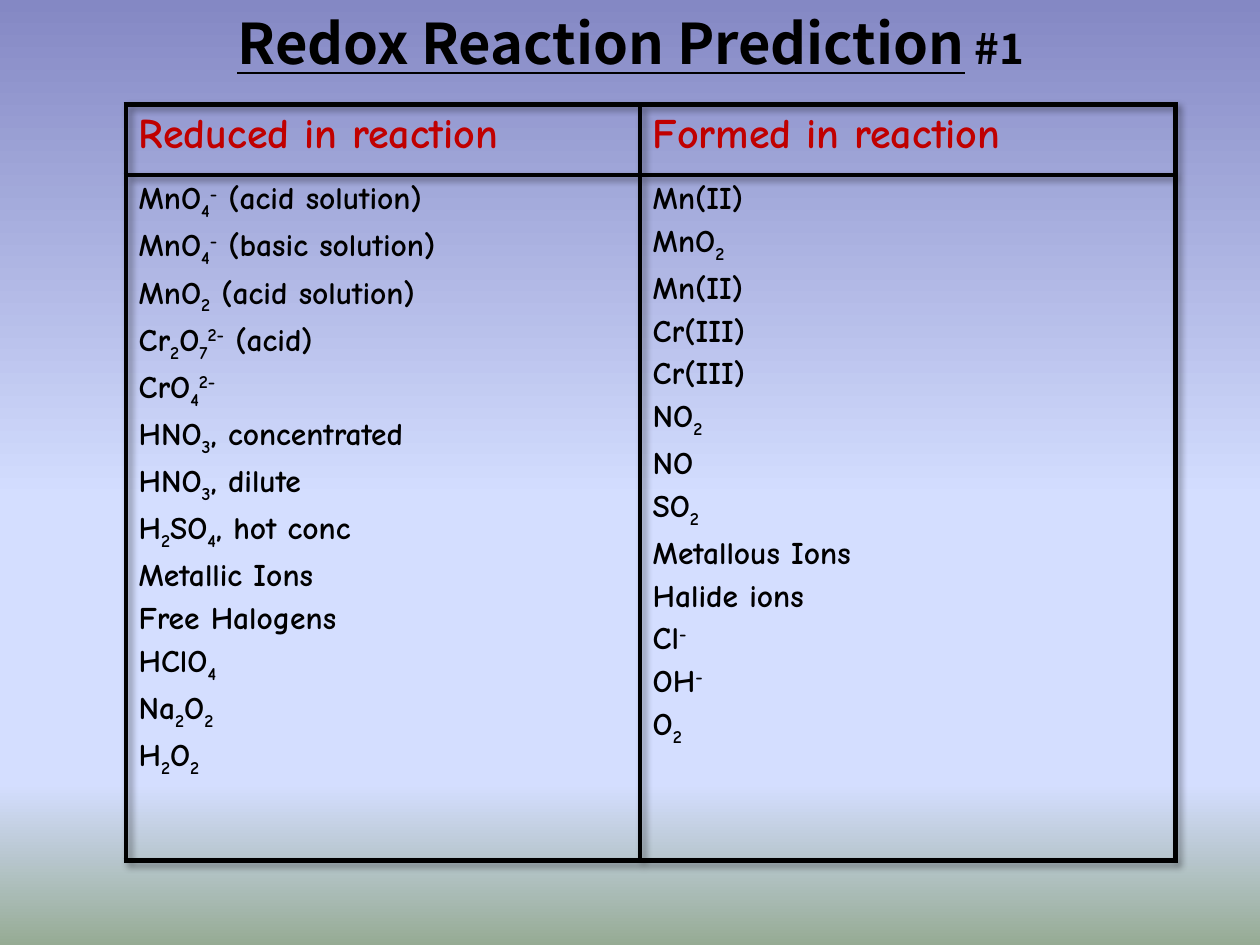
from lxml import etree
from pptx import Presentation
from pptx.dml.color import RGBColor
from pptx.enum.text import MSO_ANCHOR, MSO_AUTO_SIZE, PP_ALIGN
from pptx.oxml import parse_xml
from pptx.oxml.ns import nsdecls, qn
from pptx.util import Inches, Pt

MIDDLE = MSO_ANCHOR.MIDDLE
CENTER = PP_ALIGN.CENTER
NO_AUTOFIT = MSO_AUTO_SIZE.NONE

BLACK = RGBColor(0x00, 0x00, 0x00)
RED = RGBColor(0xC0, 0x00, 0x00)
SKY_STOPS = [(0, RGBColor(0x84, 0x88, 0xC4)), (53, RGBColor(0xD4, 0xDE, 0xFF)),
             (83, RGBColor(0xD4, 0xDE, 0xFF)), (100, RGBColor(0x96, 0xAB, 0x94))]

TITLE_FORMAT = {"name": "Noto Sans CJK JP", "size": Pt(32), "bold": True, "underline": True}
NUMBER_FORMAT = TITLE_FORMAT | {"size": Pt(24), "underline": False}
HEADER_FORMAT = {"name": "Comic Neue", "size": Pt(24), "bold": True}
ENTRY_FORMAT = HEADER_FORMAT | {"size": Pt(18)}

# Spans are split at "|"; a leading "_" is a subscript, "^" a superscript
BASELINES = {"_": "-25000", "^": "30000"}
HEADERS = ["Reduced in reaction", "Formed in reaction"]
REDUCED = ["MnO|_4|^-| (acid solution)", "MnO|_4|^-| (basic solution)",
           "MnO|_2| (acid solution)", "Cr|_2|O|_7|^2-| (acid)", "CrO|_4|^2-",
           "HNO|_3|, concentrated", "HNO|_3|, dilute", "H|_2|SO|_4|, hot conc",
           "Metallic Ions", "Free Halogens", "HClO|_4", "Na|_2|O|_2", "H|_2|O|_2"]
FORMED = ["Mn(II)", "MnO|_2", "Mn(II)", "Cr(III)", "Cr(III)", "NO|_2", "NO",
          "SO|_2", "Metallous Ions", "Halide ions", "Cl|^-", "OH|^-", "O|_2"]

COLUMN_WIDTHS = [4.08, 4.25]
ROW_HEIGHTS = [0.56, 5.44]


def paint_background(page):
    fill = page.background.fill
    fill.gradient()
    gradient = page.background._cSld.find(".//" + qn("a:gradFill"))
    stops = "".join(f'<a:gs pos="{percent * 1000}"><a:srgbClr val="{color}"/></a:gs>'
                    for percent, color in SKY_STOPS)
    gradient.replace(gradient.find(qn("a:gsLst")),
                     parse_xml(f'<a:gsLst {nsdecls("a")}>{stops}</a:gsLst>'))
    direction = gradient.find(qn("a:lin"))
    direction.set("ang", "5400000")
    direction.set("scaled", "0")


def add_span(para, text, font_format, color):
    span = para.add_run()
    span.text = text
    for name, value in font_format.items():
        setattr(span.font, name, value)
    span.font.color.rgb = color
    return span


def add_title(page):
    title = page.shapes.title
    title.left, title.top = Inches(0.92), Inches(0)
    title.width, title.height = Inches(8.17), Inches(0.67)
    frame = title.text_frame
    frame.vertical_anchor = MIDDLE
    frame.auto_size = NO_AUTOFIT
    para = frame.paragraphs[0]
    para.alignment = CENTER
    add_span(para, "Redox Reaction Prediction", TITLE_FORMAT, BLACK)
    add_span(para, " #1", NUMBER_FORMAT, BLACK)


def add_borders(cell):
    properties = cell._tc.get_or_add_tcPr()
    for position, side in enumerate(("lnL", "lnR", "lnT", "lnB")):
        line = parse_xml(f'<a:{side} {nsdecls("a")} w="{Pt(3)}"><a:solidFill>'
                         f'<a:srgbClr val="{BLACK}"/></a:solidFill></a:{side}>')
        properties.insert(position, line)


def fill_cell(cell, entries, font_format, color):
    cell.fill.background()
    add_borders(cell)
    frame = cell.text_frame
    for index, entry in enumerate(entries):
        para = frame.add_paragraph() if index else frame.paragraphs[0]
        para.space_before = Pt(font_format["size"].pt * 0.2)
        for part in entry.split("|"):
            baseline = BASELINES.get(part[0])
            span = add_span(para, part[1:] if baseline else part, font_format, color)
            if baseline:
                span.font._element.set("baseline", baseline)


def add_table_shadow(table):
    effects = etree.Element(qn("a:effectLst"))
    shadow = etree.SubElement(effects, qn("a:outerShdw"), blurRad=str(Pt(4)),
                              dist=str(Pt(3)), dir="2700000", algn="tl", rotWithShape="0")
    color = etree.SubElement(shadow, qn("a:srgbClr"), val=str(BLACK))
    etree.SubElement(color, qn("a:alpha"), val="40000")
    table._tbl.tblPr.insert(0, effects)


def add_reaction_table(page):
    table = page.shapes.add_table(2, 2, Inches(1), Inches(0.83),
                                  Inches(sum(COLUMN_WIDTHS)), Inches(sum(ROW_HEIGHTS))).table
    table.first_row = table.horz_banding = False
    for column, width in zip(table.columns, COLUMN_WIDTHS):
        column.width = Inches(width)
    for row, height in zip(table.rows, ROW_HEIGHTS):
        row.height = Inches(height)
    for index, (header, entries) in enumerate(zip(HEADERS, (REDUCED, FORMED))):
        fill_cell(table.cell(0, index), [header], HEADER_FORMAT, RED)
        fill_cell(table.cell(1, index), entries, ENTRY_FORMAT, BLACK)
    add_table_shadow(table)


def main():
    deck = Presentation()
    deck.slide_width, deck.slide_height = Inches(10), Inches(7.5)
    page = deck.slides.add_slide(deck.slide_layouts[5])
    paint_background(page)
    add_title(page)
    add_reaction_table(page)
    deck.save("out.pptx")


if __name__ == "__main__":
    main()
